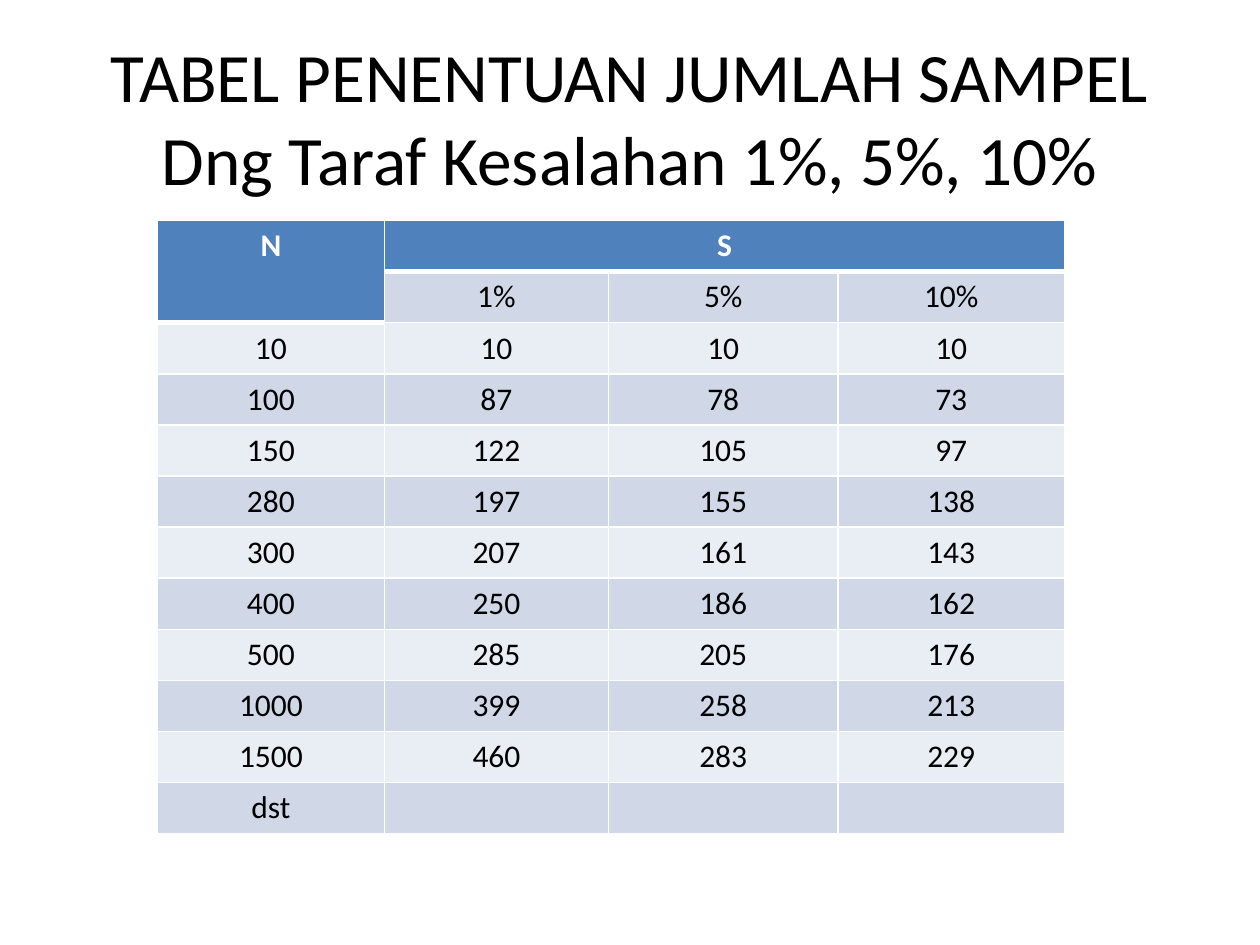
from pptx import Presentation
from pptx.dml.color import RGBColor as RGB
from pptx.enum.text import MSO_ANCHOR as Anchor, PP_ALIGN as Align
from pptx.oxml.ns import qn
from pptx.util import Pt
from lxml.etree import SubElement

COLORS = {"ink": "000000", "white": "FFFFFF", "header": "4F81BD",
          "dark_band": "D0D8E8", "light_band": "E9EDF4"}
HEADINGS = [("N", "S", "", ""), ("", "1%", "5%", "10%")]
SAMPLES = [(10, 10, 10, 10), (100, 87, 78, 73), (150, 122, 105, 97),
           (280, 197, 155, 138), (300, 207, 161, 143), (400, 250, 186, 162),
           (500, 285, 205, 176), (1000, 399, 258, 213), (1500, 460, 283, 229),
           ("dst", "", "", "")]


def write(frame, text, size=18, color="ink", bold=False, align=Align.CENTER):
    paragraph = frame.paragraphs[0]
    paragraph.alignment = align
    run = paragraph.add_run()
    run.text = str(text)
    run.font.name = "Calibri"
    run.font.size = Pt(size)
    run.font.bold = bold
    run.font.color.rgb = RGB.from_string(COLORS[color])


class SlideBuilder:
    def __init__(self, slide):
        self.slide = slide

    def title(self, text, left, top, width, height):
        title = self.slide.shapes.title
        title.left, title.top = Pt(left), Pt(top)
        title.width, title.height = Pt(width), Pt(height)
        title.text_frame.vertical_anchor = Anchor.MIDDLE
        title.text_frame.word_wrap = True
        write(title.text_frame, text, size=39.6)

    def borders(self, cell, top, bottom):
        properties = cell._tc.get_or_add_tcPr()
        for side, width in (("L", 1), ("R", 1), ("T", top), ("B", bottom)):
            line = SubElement(properties, qn(f"a:ln{side}"), w=str(Pt(width)))
            fill = SubElement(line, qn("a:solidFill"))
            SubElement(fill, qn("a:srgbClr"), val=COLORS["white"])

    def table(self, rows, left, top, widths, row_height):
        table = self.slide.shapes.add_table(
            len(rows), len(widths), Pt(left), Pt(top),
            Pt(sum(widths)), Pt(row_height * len(rows))).table
        for column, width in zip(table.columns, widths):
            column.width = Pt(width)
        for r, values in enumerate(rows):
            table.rows[r].height = Pt(row_height)
            for c, value in enumerate(values):
                header_rows = 2 if c == 0 else 1
                header = r < header_rows
                band = "dark_band" if r % 2 else "light_band"
                cell = table.cell(r, c)
                self.borders(cell, top=3 if r == header_rows else 1,
                             bottom=3 if header else 1)
                cell.fill.solid()
                cell.fill.fore_color.rgb = RGB.from_string(
                    COLORS["header" if header else band])
                if value != "":
                    write(cell.text_frame, value, bold=header,
                          color="white" if header else "ink")
        table.cell(0, 0).merge(table.cell(1, 0))
        table.cell(0, 1).merge(table.cell(0, len(widths) - 1))


def main():
    deck = Presentation()
    deck.slide_width, deck.slide_height = Pt(720), Pt(540)
    builder = SlideBuilder(deck.slides.add_slide(deck.slide_layouts[5]))
    builder.title("TABEL PENENTUAN JUMLAH SAMPEL Dng Taraf Kesalahan 1%, 5%, 10%",
                  36, 21.6, 648, 90)
    builder.table(HEADINGS + SAMPLES, 90, 126, (129.6, 128.2, 131, 129.6), 29.2)
    deck.save("out.pptx")


if __name__ == "__main__":
    main()
